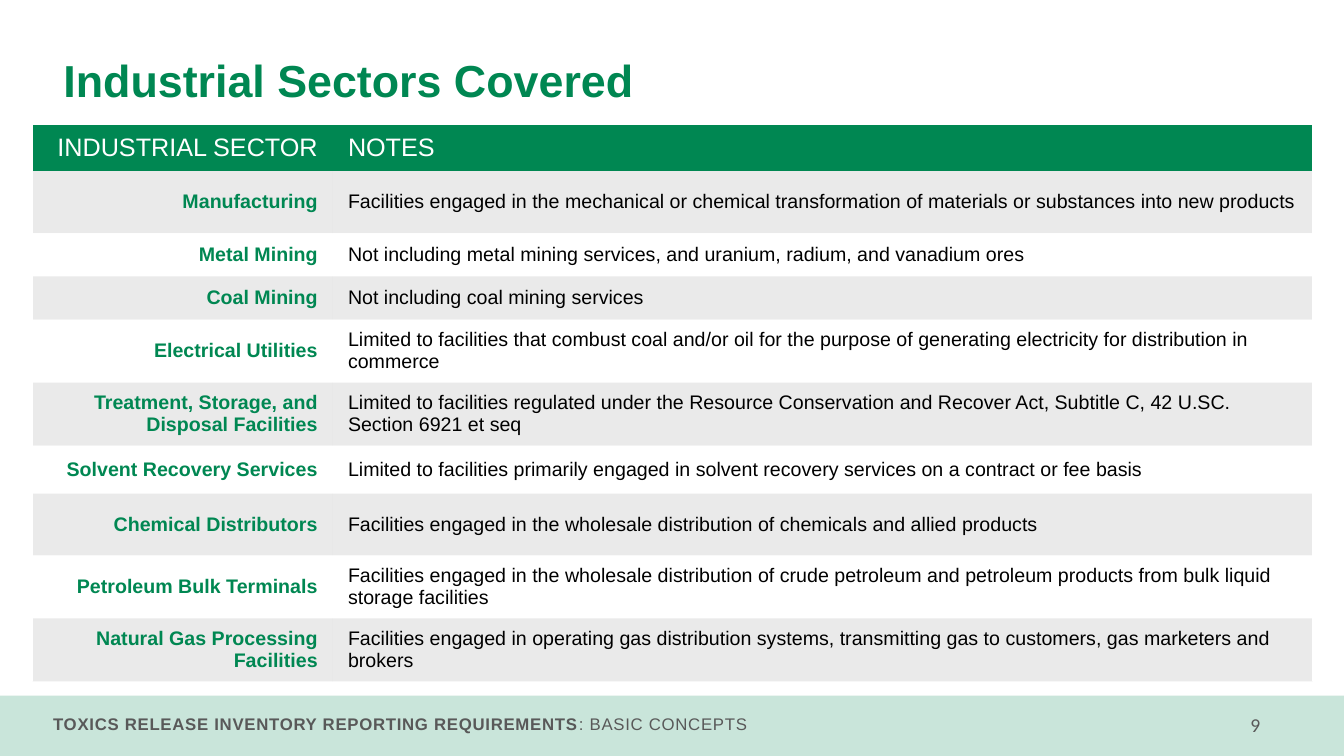
"""Builds the slide listing the industrial sectors covered by toxics release reporting."""
from lxml import etree
from pptx import Presentation
from pptx.dml.color import RGBColor
from pptx.enum.shapes import MSO_SHAPE
from pptx.enum.text import MSO_ANCHOR, PP_ALIGN
from pptx.oxml.ns import qn
from pptx.util import Cm, Pt

RECT = MSO_SHAPE.RECTANGLE
MIDDLE, TOP = MSO_ANCHOR.MIDDLE, MSO_ANCHOR.TOP
LEFT, RIGHT = PP_ALIGN.LEFT, PP_ALIGN.RIGHT
PLAIN = "{2D5ABB26-0587-4C30-8999-92F81FD0307C}"

COLORS = {
    "green": "008752",
    "band": "D9D9D9",
    "white": "FFFFFF",
    "black": "000000",
    "grey": "595959",
}

ROWS = [
    (1.11, "INDUSTRIAL SECTOR", "NOTES"),
    (1.56, "Manufacturing", "Facilities engaged in the mechanical or chemical transformation "
     "of materials or substances into new products"),
    (1.09, "Metal Mining", "Not including metal mining services, and uranium, radium, "
     "and vanadium ores"),
    (1.09, "Coal Mining", "Not including coal mining services"),
    (1.56, "Electrical Utilities", "Limited to facilities that combust coal and/or oil for the "
     "purpose of generating electricity for distribution in commerce"),
    (1.56, "Treatment, Storage, and Disposal Facilities", "Limited to facilities regulated under "
     "the Resource Conservation and Recover Act, Subtitle C, 42 U.SC. Section 6921 et seq"),
    (1.21, "Solvent Recovery Services", "Limited to facilities primarily engaged in solvent "
     "recovery services on a contract or fee basis"),
    (1.56, "Chemical Distributors", "Facilities engaged in the wholesale distribution of "
     "chemicals and allied products"),
    (1.56, "Petroleum Bulk Terminals", "Facilities engaged in the wholesale distribution of crude "
     "petroleum and petroleum products from bulk liquid storage facilities"),
    (1.56, "Natural Gas Processing Facilities", "Facilities engaged in operating gas distribution "
     "systems, transmitting gas to customers, gas marketers and brokers"),
]


def paint(fill, props, color, alpha):
    """Fill with a colour at the given percentage of opacity."""
    fill.solid()
    fill.fore_color.rgb = RGBColor.from_string(COLORS[color])
    if alpha < 100:
        tone = props.find(qn("a:solidFill"))[0]
        etree.SubElement(tone, qn("a:alpha"), val=str(alpha * 1000))


def style(run, size, color, bold=False, face="Arial"):
    """Set the look of one run."""
    font = run.font
    font.name, font.size, font.bold = face, Pt(size), bold
    font.color.rgb = RGBColor.from_string(COLORS[color])


deck = Presentation()
deck.slide_width, deck.slide_height = Cm(33.87), Cm(19.05)
slide = deck.slides.add_slide(deck.slide_layouts[6])
shapes = slide.shapes

band = shapes.add_shape(RECT, Cm(0), Cm(17.53), Cm(33.87), Cm(1.52))
band.shadow.inherit = False
band.line.fill.background()
paint(band.fill, band.element.spPr, "green", 21)

TEXTS = [
    ((1.09, 17.86, 23.88, 0.76), LEFT, TOP, 1, 50, [
        ("TOXICS RELEASE INVENTORY REPORTING REQUIREMENTS", 12, "grey", True, "Arial"),
        (": BASIC CONCEPTS", 12, "grey", False, "Arial")]),
    ((28.63, 17.83, 3.38, 0.86), RIGHT, TOP, 1, 50, [("9", 14, "grey", False, "Calibri")]),
    ((1.35, 1.07, 30.66, 2.06), LEFT, MIDDLE, 0.9, 0, [
        ("Industrial Sectors Covered", 32, "green", True, "Arial")]),
]
for place, align, anchor, lead, gap, runs in TEXTS:
    frame = shapes.add_textbox(*map(Cm, place)).text_frame
    frame.word_wrap = True
    frame.vertical_anchor = anchor
    para = frame.paragraphs[0]
    para.alignment, para.line_spacing = align, lead
    for words, *look in runs:
        run = para.add_run()
        run.text = words
        style(run, *look)
        run.font._element.set("spc", str(gap))

tall = sum(row[0] for row in ROWS)
table = shapes.add_table(len(ROWS), 2, Cm(0.82), Cm(3.15), Cm(32.26), Cm(tall)).table
table._tbl.tblPr.find(qn("a:tableStyleId")).text = PLAIN
table.columns[0].width, table.columns[1].width = Cm(7.57), Cm(24.69)

for i, (high, *words) in enumerate(ROWS):
    table.rows[i].height = Cm(high)
    for j, word in enumerate(words):
        cell = table.cell(i, j)
        cell.text_frame.text = word
        cell.vertical_anchor = MIDDLE
        cell.margin_left = cell.margin_right = Cm(0.38)
        cell.margin_top = cell.margin_bottom = Cm(0.2)
        para = cell.text_frame.paragraphs[0]
        para.alignment = LEFT if j else RIGHT
        props = cell._tc.get_or_add_tcPr()
        edge = etree.SubElement(props, qn("a:lnR" if j else "a:lnL"), w="12700")
        ink = etree.SubElement(edge, qn("a:solidFill"))
        etree.SubElement(ink, qn("a:srgbClr"), val=COLORS["white"])
        if i == 0:
            paint(cell.fill, props, "green", 100)
            style(para.runs[0], 18, "white")
        else:
            if i % 2:
                paint(cell.fill, props, "band", 55)
            else:
                paint(cell.fill, props, "white", 75 if i < 6 else 55)
            style(para.runs[0], 14, "black" if j else "green", j == 0)

deck.save("out.pptx")
